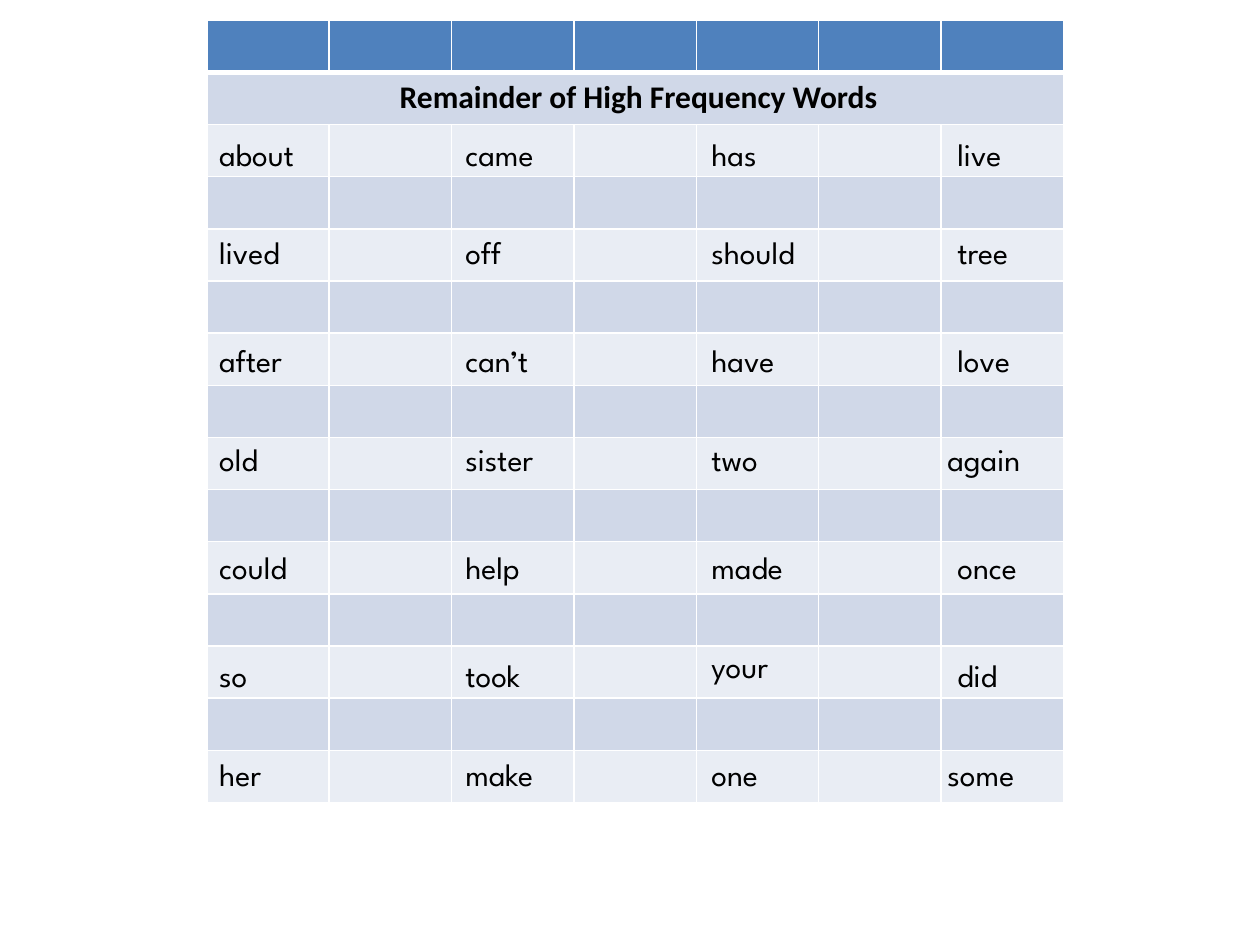
from lxml import etree
from pptx import Presentation
from pptx import util as u
from pptx.dml.color import RGBColor
from pptx.enum import text
from pptx.oxml.ns import qn

TITLE = " Remainder of High Frequency Words"
WORDS = [
    ("about", "came", "has", "live"),
    ("lived", "off", "should", "tree"),
    ("after", "can’t", "have", "love"),
    ("old", "sister", "two", "again"),
    ("could", "help", "made", "once"),
    ("so", "took", "your", "did"),
    ("her", "make", "one", "some"),
]
# Positions in centimetres
WORD_TOPS = (2.59, 4.57, 6.76, 8.74, 10.92, 13.11, 15.09)
WORD_STEP = 4.96
WORD_SIZE = (2.39, 1.02)
TALL_WORDS = {"about": 1.8, "should": 1.8, "made": 1.8}
WORD_SHIFTS = {"again": (-0.2, 0), "some": (-0.2, 0), "your": (0, -0.2)}
GRID = {"left": 4.17, "top": 0.41, "width": 17.27, "height": 15.77}
ROWS, COLUMNS = 15, 7

THEME = {
    "header": "4F81BD",
    "bands": ("E9EDF4", "D0D8E8"),
    "border": "FFFFFF",
    "border_width": 1,
    "header_rule": 3,
    "title": {"name": "Calibri", "size": u.Pt(18), "bold": True},
    "word": {"name": "League Spartan", "size": u.Pt(18)},
    "ink": "000000",
}


def write(para, words, style):
    span = para.add_run()
    span.text = words
    for name, value in style.items():
        setattr(span.font, name, value)
    span.font.color.rgb = RGBColor.from_string(THEME["ink"])


def add_borders(cell, widths):
    """Draw cell borders; widths maps a side (L, R, T, B) to points."""
    properties = cell._tc.get_or_add_tcPr()
    for index, (side, width) in enumerate(widths.items()):
        line = etree.Element(qn(f"a:ln{side}"), w=str(u.Pt(width)))
        fill = etree.SubElement(line, qn("a:solidFill"))
        etree.SubElement(fill, qn("a:srgbClr"), val=THEME["border"])
        properties.insert(index, line)


def add_grid(page):
    frame = page.shapes.add_table(ROWS, COLUMNS, *map(u.Cm, GRID.values()))
    table = frame.table
    for column in table.columns:
        column.width = u.Cm(GRID["width"] / COLUMNS)
    for index, row in enumerate(table.rows):
        row.height = u.Cm(GRID["height"] / ROWS)
        color = THEME["bands"][index % 2] if index else THEME["header"]
        widths = dict.fromkeys("LRTB", THEME["border_width"])
        if index == 0:
            widths["B"] = THEME["header_rule"]
        elif index == 1:
            widths["T"] = THEME["header_rule"]
        for cell in row.cells:
            cell.fill.solid()
            cell.fill.fore_color.rgb = RGBColor.from_string(color)
            add_borders(cell, widths)
    title = table.cell(1, 0)
    title.merge(table.cell(1, COLUMNS - 1))
    para = title.text_frame.paragraphs[0]
    para.alignment = text.PP_ALIGN.CENTER
    write(para, TITLE, THEME["title"])


def add_word(page, word, left, top):
    shift_x, shift_y = WORD_SHIFTS.get(word, (0, 0))
    width, height = WORD_SIZE
    height = TALL_WORDS.get(word, height)
    box = page.shapes.add_textbox(
        u.Cm(left + shift_x), u.Cm(top + shift_y), u.Cm(width), u.Cm(height))
    box.text_frame.word_wrap = True
    box.text_frame.auto_size = text.MSO_AUTO_SIZE.SHAPE_TO_FIT_TEXT
    write(box.text_frame.paragraphs[0], word, THEME["word"])


def main():
    deck = Presentation()
    deck.slide_width, deck.slide_height = u.Cm(25.4), u.Cm(19.05)
    page = deck.slides.add_slide(deck.slide_layouts[6])
    add_grid(page)
    for top, words in zip(WORD_TOPS, WORDS):
        for column, word in enumerate(words):
            add_word(page, word, GRID["left"] + column * WORD_STEP, top)
    deck.save("out.pptx")


if __name__ == "__main__":
    main()
